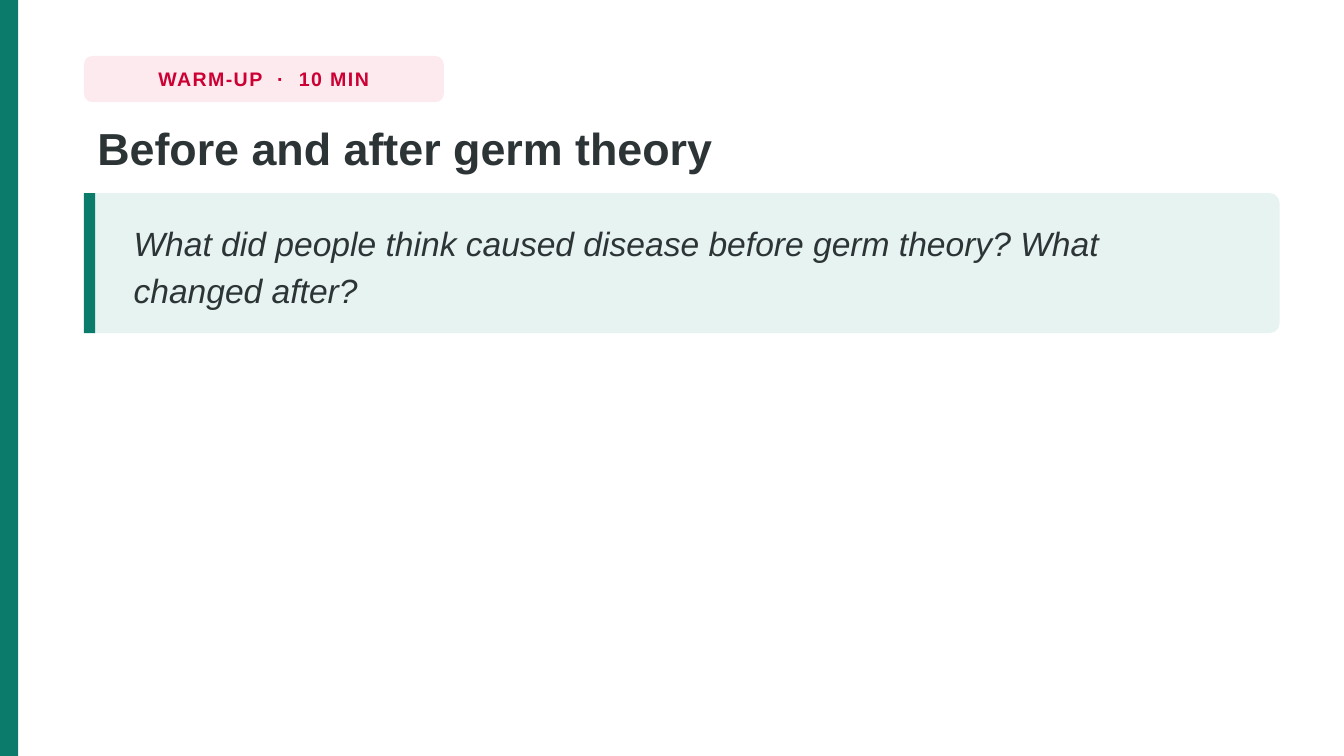
"""Build the warm-up slide on germ theory."""
from dataclasses import dataclass

from pptx import Presentation
from pptx.dml.color import RGBColor
from pptx.enum.shapes import MSO_SHAPE
from pptx.enum.text import MSO_ANCHOR, PP_ALIGN
from pptx.slide import Slide
from pptx.util import Emu, Pt

RECTANGLE = MSO_SHAPE.RECTANGLE
ROUNDED = MSO_SHAPE.ROUNDED_RECTANGLE
TOP = MSO_ANCHOR.TOP
MIDDLE = MSO_ANCHOR.MIDDLE
LEFT = PP_ALIGN.LEFT
CENTER = PP_ALIGN.CENTER

EMU_PER_PX = 9525
SLIDE_WIDTH, SLIDE_HEIGHT = 960, 540
MARGIN, CONTENT_WIDTH = 60, 854
PROMPT_TOP, PROMPT_HEIGHT = 138, 100


@dataclass(frozen=True)
class Theme:
    font: str = "Arial"
    background: str = "FFFFFF"
    accent: str = "0B7B6B"
    tag_fill: str = "FDEAEF"
    tag_text: str = "CC0033"
    prompt_fill: str = "E6F3F0"
    ink: str = "2D3436"
    tag_size: float = 10.5
    title_size: float = 24
    prompt_size: float = 18


@dataclass(frozen=True)
class Box:
    left: int
    top: int
    width: int
    height: int

    def emu(self) -> tuple[Emu, ...]:
        return tuple(
            Emu(length * EMU_PER_PX)
            for length in (self.left, self.top, self.width, self.height)
        )


@dataclass(frozen=True)
class Panel:
    box: Box
    fill: str
    radius: int = 0


@dataclass(frozen=True)
class Label:
    box: Box
    text: str
    size: float
    color: str
    bold: bool = False
    italic: bool = False
    anchor: MSO_ANCHOR = MIDDLE
    alignment: PP_ALIGN = LEFT
    line_spacing: float = 1.0
    letter_spacing: float = 0
    wrap: bool = True


THEME = Theme()
TAG_BOX = Box(MARGIN, 40, 257, 33)

PANELS = [
    Panel(Box(0, 0, 13, SLIDE_HEIGHT), THEME.accent),
    Panel(TAG_BOX, THEME.tag_fill, radius=6),
    Panel(Box(MARGIN, PROMPT_TOP, CONTENT_WIDTH, PROMPT_HEIGHT),
          THEME.prompt_fill, radius=7),
    Panel(Box(MARGIN, PROMPT_TOP, 8, PROMPT_HEIGHT), THEME.accent),
]

LABELS = [
    Label(TAG_BOX, "WARM-UP  ·  10 MIN", THEME.tag_size, THEME.tag_text,
          bold=True, alignment=CENTER, letter_spacing=0.8, wrap=False),
    Label(Box(MARGIN, 81, CONTENT_WIDTH, 54), "Before and after germ theory",
          THEME.title_size, THEME.ink, bold=True, anchor=TOP, line_spacing=1.02),
    Label(Box(86, PROMPT_TOP + 5, 802, PROMPT_HEIGHT - 10),
          "What did people think caused disease before germ theory? "
          "What changed after?",
          THEME.prompt_size, THEME.ink, italic=True, line_spacing=1.16),
]


def draw_panel(slide: Slide, panel: Panel) -> None:
    kind = ROUNDED if panel.radius else RECTANGLE
    shape = slide.shapes.add_shape(kind, *panel.box.emu())
    if panel.radius:
        shape.adjustments[0] = panel.radius / min(panel.box.width, panel.box.height)
    shape.shadow.inherit = False
    shape.fill.solid()
    shape.fill.fore_color.rgb = RGBColor.from_string(panel.fill)
    shape.line.fill.background()


def draw_label(slide: Slide, label: Label) -> None:
    text_frame = slide.shapes.add_textbox(*label.box.emu()).text_frame
    text_frame.word_wrap = label.wrap
    text_frame.vertical_anchor = label.anchor
    text_frame.text = label.text
    paragraph = text_frame.paragraphs[0]
    paragraph.alignment = label.alignment
    paragraph.line_spacing = label.line_spacing
    run = paragraph.runs[0]
    run.font.name = THEME.font
    run.font.size = Pt(label.size)
    run.font.bold = label.bold
    run.font.italic = label.italic
    run.font.color.rgb = RGBColor.from_string(label.color)
    if label.letter_spacing:
        run._r.get_or_add_rPr().set("spc", str(round(label.letter_spacing * 100)))


def main() -> None:
    presentation = Presentation()
    presentation.slide_width = Emu(SLIDE_WIDTH * EMU_PER_PX)
    presentation.slide_height = Emu(SLIDE_HEIGHT * EMU_PER_PX)
    slide = presentation.slides.add_slide(presentation.slide_layouts[6])
    slide.background.fill.solid()
    slide.background.fill.fore_color.rgb = RGBColor.from_string(THEME.background)
    for panel in PANELS:
        draw_panel(slide, panel)
    for label in LABELS:
        draw_label(slide, label)
    presentation.save("out.pptx")


if __name__ == "__main__":
    main()
